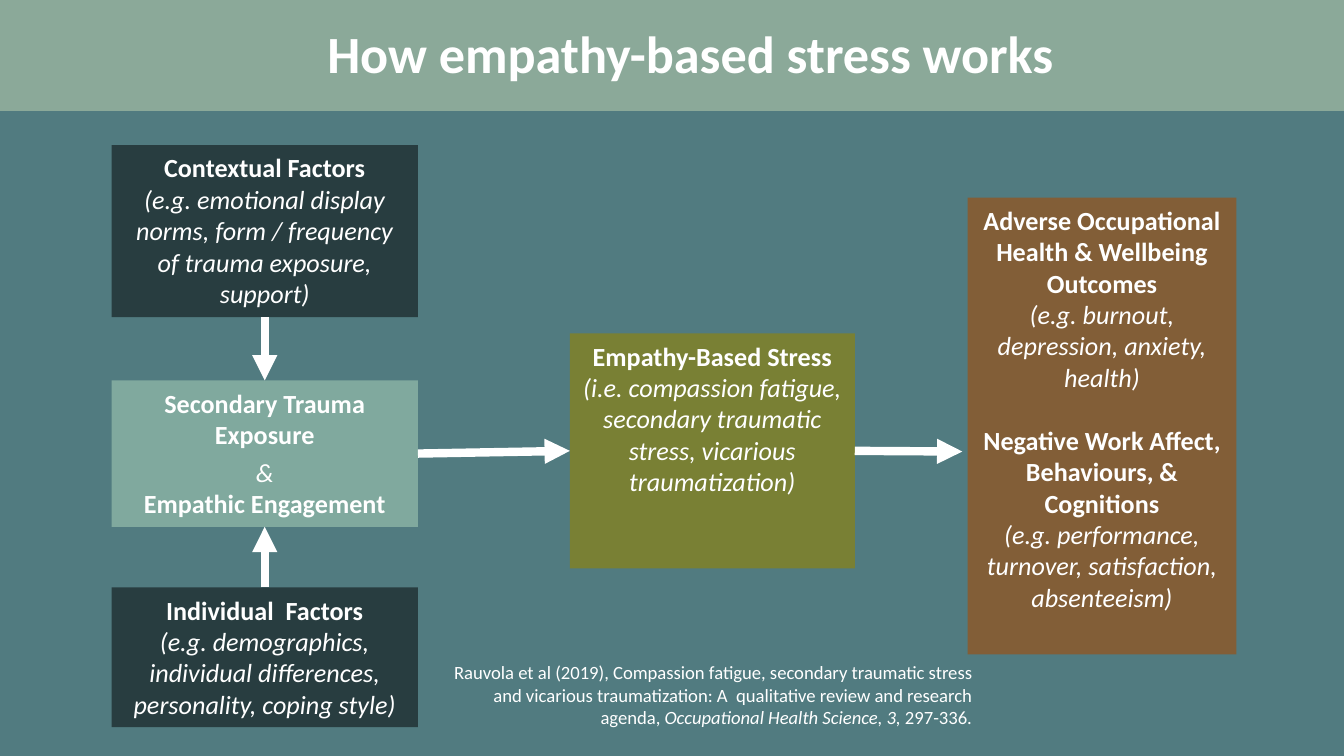
"""Build the empathy-based stress slide."""
from lxml.etree import SubElement
from pptx import Presentation
from pptx.dml.color import RGBColor
from pptx.enum.shapes import MSO_CONNECTOR as Link, MSO_SHAPE as Form
from pptx.enum.text import MSO_ANCHOR as Anchor, MSO_AUTO_SIZE as Fit, PP_ALIGN as Align
from pptx.oxml.ns import qn
from pptx.util import Inches, Pt

WIDE = 10
HIGH = WIDE * 9 / 16
FONT, WHITE = "Calibri", "FFFFFF"
TITLE = "How empathy-based stress works"
COLS = [(0.83, 2.28), (4.24, 2.12), (7.2, 2)]
TOP, LEFT, BOTTOM, RIGHT = range(4)

BOXES = {
    "context": (0, 1.08, 1.28, "283D40", [
        ("Contextual Factors", "b", 0),
        ("(e.g. emotional display norms, form / frequency of trauma exposure, support)", "i", 0)]),
    "person": (0, 4.37, 1.04, "283D40", [
        ("Individual  Factors", "b", 0),
        ("(e.g. demographics, individual differences, personality, coping style)", "i", 0)]),
    "trauma": (0, 2.83, 1.09, "80A99E", [
        ("Secondary Trauma Exposure", "b", 0),
        ("&", "i", 3.4),
        ("Empathic Engagement", "b", 0)]),
    "stress": (1, 2.48, 1.75, "798034", [
        ("Empathy-Based Stress", "b", 0),
        ("(i.e. compassion fatigue, secondary traumatic stress, vicarious traumatization)", "i", 0)]),
    "outcome": (2, 1.47, 3.4, "825E37", [
        ("Adverse Occupational Health & Wellbeing Outcomes", "b", 0),
        ("(e.g. burnout, depression, anxiety, health)", "i", 0),
        ("Negative Work Affect, Behaviours, & Cognitions", "b", 17),
        ("(e.g. performance, turnover, satisfaction, absenteeism)", "i", 0)]),
}
ARROWS = [
    ("context", BOTTOM, "trauma", TOP),
    ("person", TOP, "trauma", BOTTOM),
    ("trauma", RIGHT, "stress", LEFT),
    ("stress", RIGHT, None, None),
]
FREE_END = (7.16, 3.36)
SOURCE = [
    ("Rauvola et al (2019), Compassion fatigue, secondary traumatic stress and "
     "vicarious traumatization: A  qualitative review and research agenda, ", False),
    ("Occupational Health Science, 3, ", True),
    ("297-336.", False),
]


def tint(code):
    return RGBColor.from_string(code)


def style(para, size, align, bold=False, italic=None):
    para.alignment = align
    font = para.font
    font.name, font.size, font.bold, font.italic = FONT, Pt(size), bold, italic
    font.color.rgb = tint(WHITE)


def block(slide, x, y, w, h, fill):
    shape = slide.shapes.add_shape(Form.RECTANGLE, *map(Inches, (x, y, w, h)))
    shape.shadow.inherit = False
    shape.fill.solid()
    shape.fill.fore_color.rgb = tint(fill)
    shape.line.fill.background()
    return shape


def box(slide, col, y, h, fill, lines):
    x, w = COLS[col]
    shape = block(slide, x, y, w, h, fill)
    frame = shape.text_frame
    frame.word_wrap, frame.vertical_anchor = True, Anchor.TOP
    for i, (text, look, gap) in enumerate(lines):
        para = frame.add_paragraph() if i else frame.paragraphs[0]
        para.text = text
        if gap:
            para.space_before = Pt(gap)
        style(para, 14, Align.CENTER, look == "b", look == "i")
    return shape


def arrow(slide, start, out, end, into):
    link = slide.shapes.add_connector(Link.STRAIGHT, 0, 0, *map(Inches, FREE_END))
    link.begin_connect(start, out)
    if end:
        link.end_connect(end, into)
    link.line.color.rgb, link.line.width = tint(WHITE), Pt(4.5)
    props = link.element.spPr
    SubElement(props.get_or_add_ln(), qn("a:tailEnd"), type="triangle")
    SubElement(props, qn("a:effectLst"))


def head(slide):
    band = block(slide, 0, -0.01, WIDE, 0.83, "8BA999")
    band.line.color.rgb, band.line.width = tint("8BA999"), Pt(1.25)
    title = slide.shapes.title
    title.left, title.top, title.width, title.height = map(Inches, (2.09, 0.12, 6.09, 0.39))
    title.element.getparent().append(title.element)
    frame = title.text_frame
    frame.text = TITLE
    frame.word_wrap, frame.auto_size, frame.vertical_anchor = True, Fit.NONE, Anchor.TOP
    frame.margin_left = frame.margin_right = Inches(0.07)
    frame.margin_top = frame.margin_bottom = Inches(0.04)
    style(frame.paragraphs[0], 28, Align.CENTER, True)


def cite(slide):
    frame = slide.shapes.add_textbox(*map(Inches, (3.27, 4.87, 4.06, 0.61))).text_frame
    frame.word_wrap = True
    para = frame.paragraphs[0]
    style(para, 10, Align.RIGHT)
    for text, slant in SOURCE:
        run = para.add_run()
        run.text, run.font.italic = text, slant


def main():
    deck = Presentation()
    deck.slide_width, deck.slide_height = Inches(WIDE), Inches(HIGH)
    slide = deck.slides.add_slide(deck.slide_layouts[5])
    slide.background.fill.solid()
    slide.background.fill.fore_color.rgb = tint("517B80")
    made = {name: box(slide, *spot) for name, spot in BOXES.items()}
    for start, out, end, into in ARROWS:
        arrow(slide, made[start], out, made.get(end), into)
    cite(slide)
    head(slide)
    deck.save("out.pptx")


if __name__ == "__main__":
    main()
